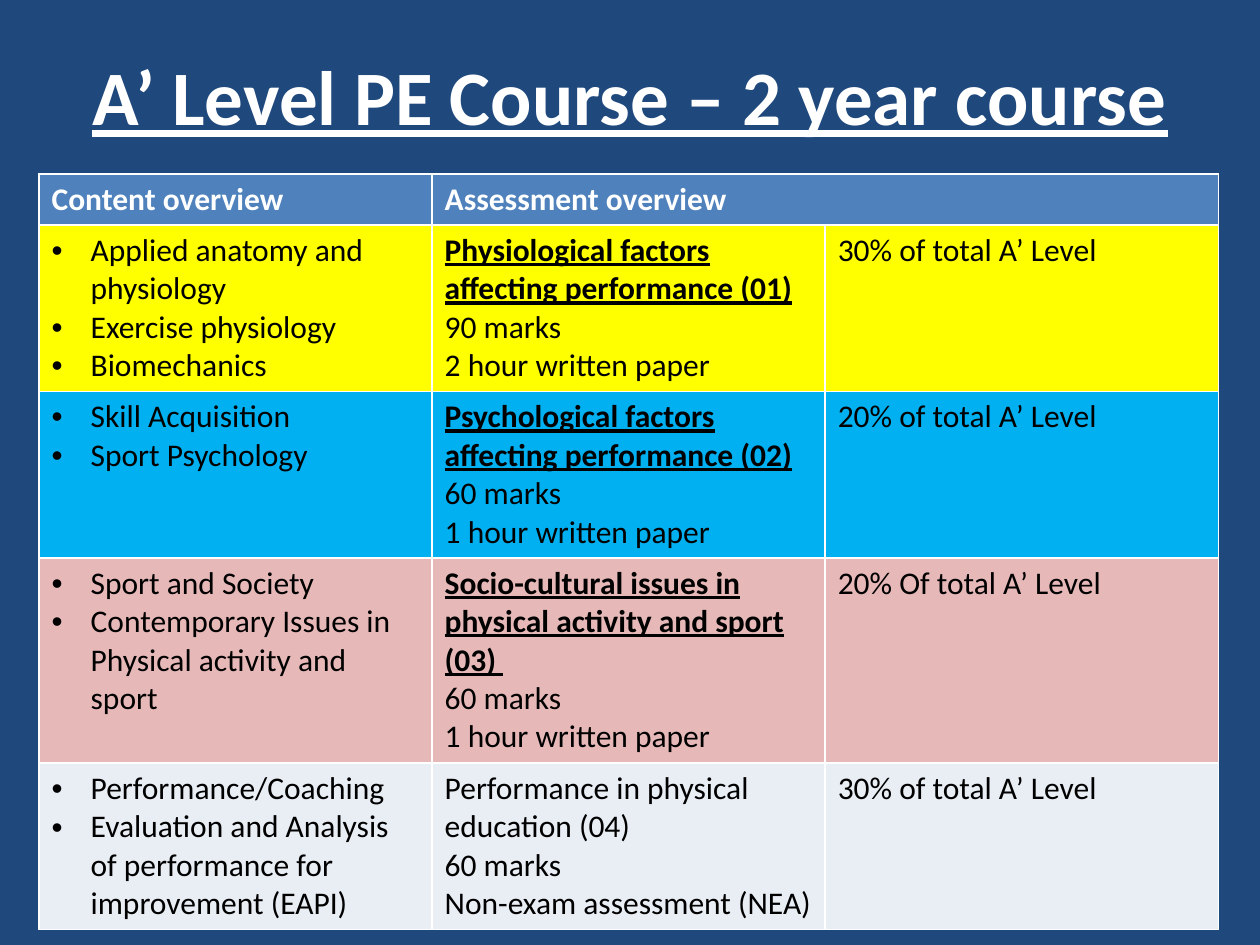
from pptx import Presentation
from pptx.dml.color import RGBColor
from pptx.enum.text import MSO_ANCHOR, PP_ALIGN
from pptx.oxml.xmlchemy import OxmlElement
from pptx.util import Inches, Pt

COLORS = {"navy": "1F497D", "blue": "4F81BD", "yellow": "FFFF00", "sky": "00B0F0",
          "pink": "E6B9B8", "pale": "E9EDF4", "white": "FFFFFF", "black": "000000"}

TITLE = "A’ Level PE Course – 2 year course"
HEADERS = ["Content overview", "Assessment overview"]
COMPONENTS = [
    {"fill": "yellow", "height": 1.32, "strong": True,
     "content": ["Applied anatomy and physiology", "Exercise physiology", "Biomechanics"],
     "paper": ["Physiological factors affecting performance (01)", "90 marks",
               "2 hour written paper"],
     "weight": "30% of total A’ Level"},
    {"fill": "sky", "height": 1.32, "strong": True,
     "content": ["Skill Acquisition", "Sport Psychology"],
     "paper": ["Psychological factors affecting performance (02)", "60 marks",
               "1 hour written paper"],
     "weight": "20% of total A’ Level"},
    {"fill": "pink", "height": 1.63, "strong": True,
     "content": ["Sport and Society", "Contemporary Issues in Physical activity and sport"],
     "paper": ["Socio-cultural issues in physical activity and sport (03) ", "60 marks",
               "1 hour written paper"],
     "weight": "20% Of total A’ Level"},
    {"fill": "pale", "height": 1.32, "strong": False,
     "content": ["Performance/Coaching",
                 "Evaluation and Analysis of performance for improvement (EAPI)"],
     "paper": ["Performance in physical education (04)", "60 marks",
               "Non-exam assessment (NEA)"],
     "weight": "30% of total A’ Level"},
]
HEADER_HEIGHT = 0.4
COLUMN_WIDTH = 3.12

BODY = {"name": "Calibri", "size": Pt(18), "bold": False, "underline": False}
HEADER = {**BODY, "bold": True}
STRONG = {**HEADER, "underline": True}
HEADING = {**STRONG, "size": Pt(44)}


def rgb(name):
    return RGBColor.from_string(COLORS[name])


def add_text(p, text, fmt, color):
    r = p.add_run()
    r.text = text
    for key, value in fmt.items():
        setattr(r.font, key, value)
    r.font.color.rgb = rgb(color)


def add_bullet(p):
    pPr = p._p.get_or_add_pPr()
    pPr.set("marL", str(Inches(0.31)))
    pPr.set("indent", str(-Inches(0.31)))
    font = OxmlElement("a:buFont")
    font.set("typeface", "Arial")
    char = OxmlElement("a:buChar")
    char.set("char", "•")
    pPr.extend([font, char])


def fill_cell(cell, fill, lines, color="black", bullets=False):
    cell.fill.solid()
    cell.fill.fore_color.rgb = rgb(fill)
    tf = cell.text_frame
    for i, (text, fmt) in enumerate(lines):
        p = tf.add_paragraph() if i else tf.paragraphs[0]
        if bullets:
            add_bullet(p)
        add_text(p, text, fmt, color)


prs = Presentation()
prs.slide_width, prs.slide_height = Inches(10), Inches(7.5)
s = prs.slides.add_slide(prs.slide_layouts[5])
s.background.fill.solid()
s.background.fill.fore_color.rgb = rgb("navy")

title = s.shapes.title
title.left, title.top, title.width, title.height = map(Inches, (0.5, 0.13, 9, 1.25))
tf = title.text_frame
tf.vertical_anchor = MSO_ANCHOR.MIDDLE
tf.paragraphs[0].alignment = PP_ALIGN.CENTER
add_text(tf.paragraphs[0], TITLE, HEADING, "white")

heights = [HEADER_HEIGHT] + [c["height"] for c in COMPONENTS]
table = s.shapes.add_table(len(heights), 3, Inches(0.31), Inches(1.38),
                           Inches(3 * COLUMN_WIDTH), Inches(sum(heights))).table
for column in table.columns:
    column.width = Inches(COLUMN_WIDTH)
for row, height in zip(table.rows, heights):
    row.height = Inches(height)

table.cell(0, 1).merge(table.cell(0, 2))
for i, text in enumerate(HEADERS):
    fill_cell(table.cell(0, i), "blue", [(text, HEADER)], "white")

for i, c in enumerate(COMPONENTS, 1):
    name, *details = c["paper"]
    paper = [(name, STRONG if c["strong"] else BODY)] + [(d, BODY) for d in details]
    fill_cell(table.cell(i, 0), c["fill"], [(t, BODY) for t in c["content"]], bullets=True)
    fill_cell(table.cell(i, 1), c["fill"], paper)
    fill_cell(table.cell(i, 2), c["fill"], [(c["weight"], BODY)])

prs.save("out.pptx")
